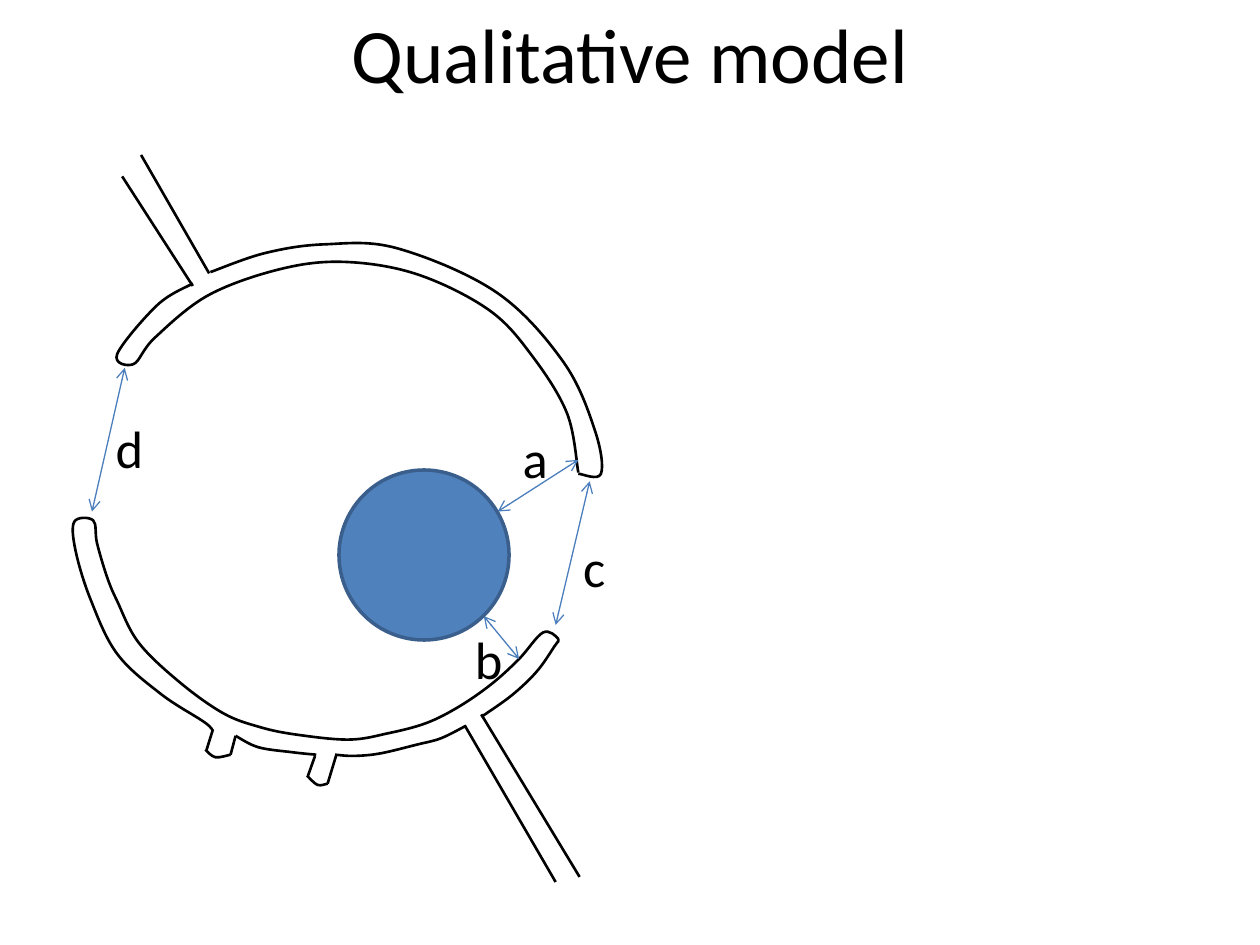
from dataclasses import dataclass
from math import cos, radians, sin

from lxml import etree
from pptx import Presentation
from pptx.dml.color import RGBColor
from pptx.enum.shapes import MSO_CONNECTOR, MSO_SHAPE
from pptx.enum.text import MSO_ANCHOR, MSO_AUTO_SIZE, PP_ALIGN
from pptx.oxml.ns import qn
from pptx.util import Inches, Pt

STRAIGHT = MSO_CONNECTOR.STRAIGHT
OVAL = MSO_SHAPE.OVAL
TOP = MSO_ANCHOR.TOP
GROW = MSO_AUTO_SIZE.SHAPE_TO_FIT_TEXT
CENTER = PP_ALIGN.CENTER
TILT = 12  # degrees by which the curved walls are turned


@dataclass(frozen=True)
class Theme:
    font: str = "Calibri"
    title_size: int = 44
    label_size: int = 30
    ink: RGBColor = RGBColor(0x00, 0x00, 0x00)
    arrow: RGBColor = RGBColor(0x4B, 0x7E, 0xBC)
    ball: RGBColor = RGBColor(0x4F, 0x81, 0xBD)
    ball_edge: RGBColor = RGBColor(0x3A, 0x5F, 0x8C)
    wall_width: float = 1.5
    arrow_width: float = 0.75
    ball_width: float = 2


THEME = Theme()

# Straight wall pieces on either side of the curved ones
STEM_LINES = [
    ((1.53, 2.27), (0.97, 1.4)), ((1.66, 2.17), (1.12, 1.23)),
    ((4.41, 7), (3.69, 5.76)), ((3.82, 5.67), (4.6, 6.96)),
]
STUB_LINES = [
    ((1.83, 5.99), (1.87, 5.84)), ((1.64, 5.95), (1.69, 5.79)),
    ((2.5, 6), (2.44, 6.17)), ((2.67, 5.99), (2.6, 6.22)),
]

# Curved wall pieces, each a smooth curve through its points
UPPER_INNER = [
    (4.59, 3.75), (4.5, 3.28), (4.22, 2.82), (3.88, 2.46), (3.32, 2.18),
    (2.76, 2.08), (2.25, 2.13), (1.66, 2.34), (1.23, 2.68), (1.06, 2.89),
    (0.93, 2.81), (1.25, 2.42), (1.53, 2.25),
]
UPPER_OUTER = [
    (1.67, 2.16), (2.1, 2.01), (2.57, 1.94), (3.15, 1.97), (3.94, 2.32),
    (4.47, 2.87), (4.72, 3.41), (4.77, 3.76), (4.59, 3.76),
]
LOWER_WALL = [
    (3.82, 5.69), (4.06, 5.52), (4.26, 5.33), (4.4, 5.13), (4.43, 5.07),
    (4.31, 5.02), (4.12, 5.23), (3.9, 5.43), (3.64, 5.61), (3.38, 5.74),
    (3.08, 5.82), (2.77, 5.87), (2.35, 5.83), (2.06, 5.77), (1.77, 5.66),
    (1.42, 5.41), (1.1, 5.1), (0.93, 4.77), (0.85, 4.58), (0.77, 4.31),
    (0.74, 4.13), (0.59, 4.14), (0.6, 4.37), (0.72, 4.76), (0.93, 5.19),
    (1.28, 5.51), (1.62, 5.73), (1.69, 5.8),
]
BETWEEN_STUBS = [(1.87, 5.84), (2.05, 5.93), (2.32, 5.97), (2.51, 5.99)]
LOWER_OUTER = [
    (3.7, 5.76), (3.5, 5.86), (3.31, 5.91), (3.02, 5.98), (2.81, 6),
    (2.66, 5.99),
]
LEFT_STUB_END = [(1.63, 5.95), (1.71, 6.01), (1.83, 5.99)]
RIGHT_STUB_END = [(2.44, 6.16), (2.52, 6.23), (2.6, 6.22)]
MAIN_CURVES = [UPPER_INNER, UPPER_OUTER, LOWER_WALL]
STUB_CURVES = [BETWEEN_STUBS, LOWER_OUTER, LEFT_STUB_END, RIGHT_STUB_END]

# Distances: name, label box, arrow ends
DISTANCES = [
    ("b", (3.67, 4.93, 0.42, 0.61), (3.84, 4.89), (4.12, 5.23)),
    ("a", (4.05, 3.33, 0.4, 0.61), (3.95, 4.06), (4.59, 3.65)),
    ("c", (4.53, 4.2, 0.38, 0.61), (4.68, 3.82), (4.41, 4.96)),
    ("d", (0.82, 3.25, 0.42, 0.61), (0.99, 2.92), (0.73, 4.06)),
]


def turn(point, degrees):
    """Turn a point clockwise about the slide's corner."""
    x, y = point
    c, s = cos(radians(degrees)), sin(radians(degrees))
    return round(x * c - y * s), round(x * s + y * c)


def add_line(shapes, start, end, color, width, arrows=False):
    line = shapes.add_connector(STRAIGHT, *map(Inches, (*start, *end)))
    line.line.color.rgb = color
    line.line.width = Pt(width)
    if arrows:
        ln = line.line._get_or_add_ln()
        for tag in ("a:headEnd", "a:tailEnd"):
            etree.SubElement(ln, qn(tag), type="arrow")
    etree.SubElement(line._element.spPr, qn("a:effectLst"))


def add_wall_lines(shapes, lines):
    for start, end in lines:
        add_line(shapes, start, end, THEME.ink, THEME.wall_width)


def bend_segments(sp):
    """Turn the straight segments into Bezier curves through the same points."""
    pts = [(int(pt.get("x")), int(pt.get("y")))
           for pt in sp._element.iter(qn("a:pt"))]
    padded = [pts[0], *pts, pts[-1]]
    segments = list(sp._element.iter(qn("a:lnTo")))
    knots = zip(padded, padded[1:], padded[2:], padded[3:])
    for segment, (before, start, end, after) in zip(segments, knots):
        leave = [a + (b - z) / 6 for z, a, b in zip(before, start, end)]
        arrive = [b - (c - a) / 6 for a, b, c in zip(start, end, after)]
        curve = etree.Element(qn("a:cubicBezTo"))
        for x, y in (leave, arrive, end):
            etree.SubElement(curve, qn("a:pt"), x=str(round(x)), y=str(round(y)))
        segment.getparent().replace(segment, curve)


def add_curve(shapes, points):
    start, *rest = [turn(map(Inches, point), -TILT) for point in points]
    builder = shapes.build_freeform(*start)
    builder.add_line_segments(rest, close=False)
    sp = builder.convert_to_shape()
    bend_segments(sp)
    # Turn the shape back about its own centre
    half_w, half_h = sp.width // 2, sp.height // 2
    x, y = turn((sp.left + half_w, sp.top + half_h), TILT)
    sp.left, sp.top, sp.rotation = x - half_w, y - half_h, TILT
    sp.shadow.inherit = False
    sp.fill.background()
    sp.line.color.rgb = THEME.ink
    sp.line.width = Pt(THEME.wall_width)


def add_text(s, text, box, size, wrap=False, align=None):
    tf = s.shapes.add_textbox(*map(Inches, box)).text_frame
    tf.word_wrap = wrap
    tf.vertical_anchor = TOP
    if not wrap:
        tf.auto_size = GROW
    p = tf.paragraphs[0]
    p.text = text
    p.alignment = align
    p.font.name = THEME.font
    p.font.size = Pt(size)
    p.font.color.rgb = THEME.ink


def add_ball(s, box):
    sp = s.shapes.add_shape(OVAL, *map(Inches, box))
    sp.shadow.inherit = False
    sp.fill.solid()
    sp.fill.fore_color.rgb = THEME.ball
    sp.line.color.rgb = THEME.ball_edge
    sp.line.width = Pt(THEME.ball_width)


def main():
    prs = Presentation()
    prs.slide_width, prs.slide_height = Inches(10), Inches(7.5)
    s = prs.slides.add_slide(prs.slide_layouts[6])

    # Walls, kept together as one group
    walls = s.shapes.add_group_shape().shapes
    for lines, curves in ((STEM_LINES, MAIN_CURVES), (STUB_LINES, STUB_CURVES)):
        add_wall_lines(walls, lines)
        for points in curves:
            add_curve(walls, points)

    # Distances with their labels
    for name, box, start, end in DISTANCES:
        add_line(s.shapes, start, end, THEME.arrow, THEME.arrow_width, arrows=True)
        add_text(s, name, box, THEME.label_size)

    # Title and ball
    add_text(s, "Qualitative model", (0, 0, 10, 1.08), THEME.title_size,
             wrap=True, align=CENTER)
    add_ball(s, (2.69, 3.73, 1.35, 1.35))

    prs.save("out.pptx")


if __name__ == "__main__":
    main()
